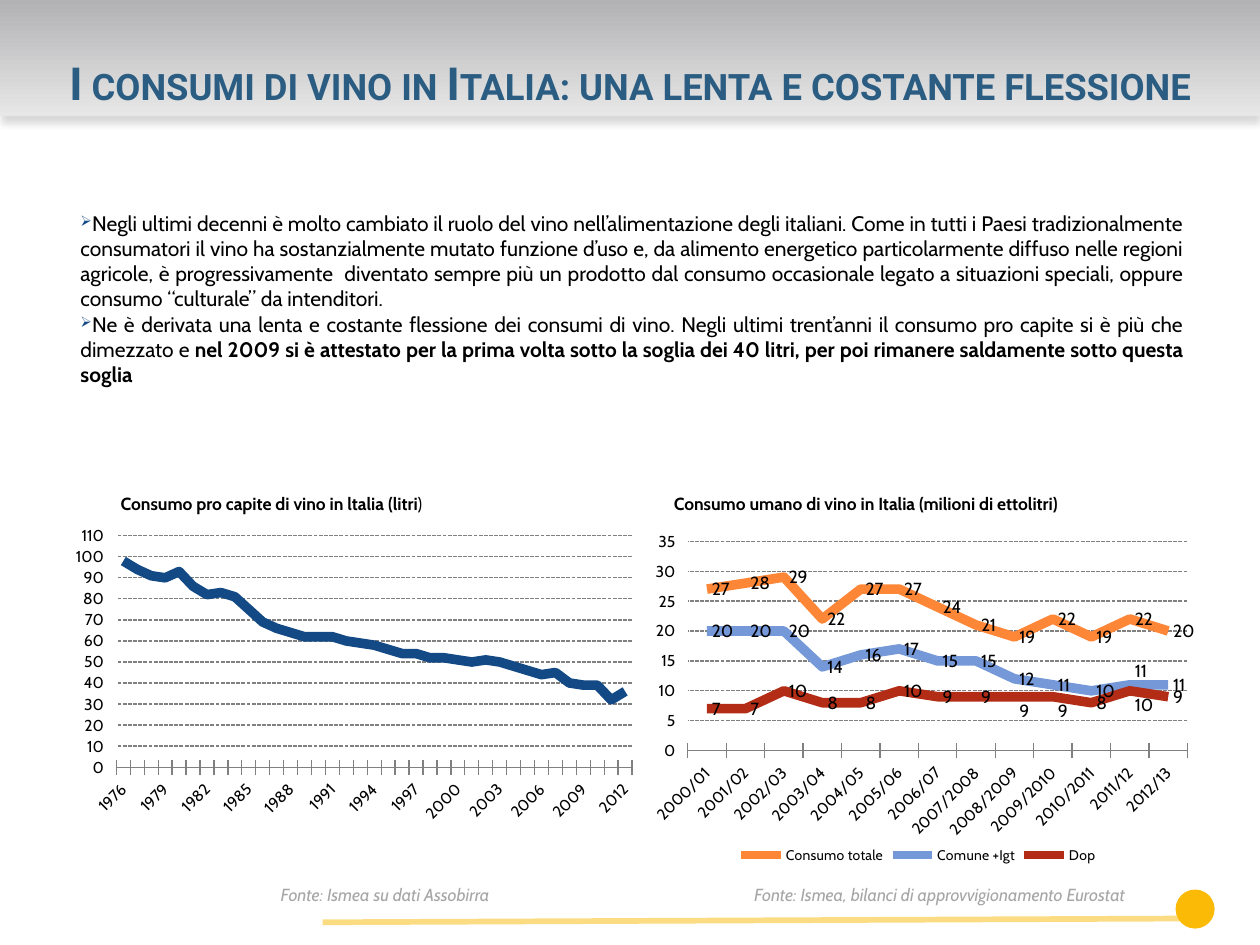
from dataclasses import dataclass

from lxml import etree
from pptx import Presentation
from pptx import oxml
from pptx.chart import data as chart_data
from pptx.dml import color as dml
from pptx.enum import chart as ce
from pptx.enum import dml as de
from pptx.enum import shapes, text
from pptx.oxml import ns
from pptx.util import Inches, Pt


@dataclass(frozen=True)
class Theme:
    title: str = "2B5C82"
    blue: str = "134985"
    gold: str = "FABA06"
    black: str = "000000"
    source: str = "A6A6A6"
    grid: str = "808080"
    shadow: str = "D9D9D9"
    band: tuple = ("B2B2B4", "E7E7E8")
    series: tuple = ("FE8637", "7598D9", "B32C16")
    heading_font: str = "Roboto"
    body_font: str = "Cabin"
    title_size: int = 26
    body_size: int = 12
    label_size: int = 10
    axis_size: int = 9
    legend_size: int = 8


THEME = Theme()
PER_CAPITA = [98, 94, 91, 90, 93, 86, 82, 83, 81, 75, 69, 66, 64, 62, 62, 62, 60, 59, 58,
              56, 54, 54, 52, 52, 51, 50, 51, 50, 48, 46, 44, 45, 40, 39, 39, 32, 36]
SEASONS = ["2000/01", "2001/02", "2002/03", "2003/04", "2004/05", "2005/06", "2006/07",
           "2007/2008", "2008/2009", "2009/2010", "2010/2011", "2011/12", "2012/13"]
CONSUMPTION = {
    "Consumo totale": [27, 28, 29, 22, 27, 27, 24, 21, 19, 22, 19, 22, 20],
    "Comune +Igt": [20, 20, 20, 14, 16, 17, 15, 15, 12, 11, 10, 11, 11],
    "Dop": [7, 7, 10, 8, 8, 10, 9, 9, 9, 9, 8, 10, 9],
}
LABEL_SHIFTS = {"Comune +Igt": {11: -0.04}, "Dop": {8: 0.04, 9: 0.04, 11: 0.04}}
PARAGRAPHS = [
    [("Negli ultimi decenni è molto cambiato il ruolo del vino nell’alimentazione degli italiani. "
      "Come in tutti i Paesi tradizionalmente consumatori il vino ha sostanzialmente mutato "
      "funzione d’uso e, da alimento energetico particolarmente diffuso nelle regioni agricole, "
      "è progressivamente  diventato sempre più un prodotto dal consumo occasionale legato a "
      "situazioni speciali, oppure consumo “culturale” da intenditori.", False)],
    [("Ne è derivata una lenta e costante flessione dei consumi di vino. Negli ultimi trent’anni "
      "il consumo pro capite si è più che dimezzato e ", False),
     ("nel 2009 si è attestato per la prima volta sotto la soglia dei 40 litri, per poi rimanere "
      "saldamente sotto questa soglia", True)],
]


def rgb(value):
    return dml.RGBColor.from_string(value)


def box(left, top, width, height):
    return Inches(left), Inches(top), Inches(width), Inches(height)


def style_font(font, size, color=THEME.black, name=THEME.body_font, bold=False, italic=False):
    font.size, font.name, font.bold, font.italic = Pt(size), name, bold, italic
    font.color.rgb = rgb(color)


def add_bullet(paragraph):
    properties = paragraph._p.get_or_add_pPr()
    properties.set("marL", "0")
    properties.set("indent", "0")
    for xml in (f'<a:buClr {ns.nsdecls("a")}><a:srgbClr val="{THEME.blue}"/></a:buClr>',
                f'<a:buSzPct {ns.nsdecls("a")} val="70000"/>',
                f'<a:buChar {ns.nsdecls("a")} char="➢"/>'):
        properties.append(oxml.parse_xml(xml))


def add_text(slide, place, paragraphs, size=THEME.label_size, color=THEME.black,
             align=text.PP_ALIGN.LEFT, italic=False, bullets=False):
    frame = slide.shapes.add_textbox(*box(*place)).text_frame
    frame.word_wrap = True
    for index, runs in enumerate(paragraphs):
        paragraph = frame.add_paragraph() if index else frame.paragraphs[0]
        paragraph.alignment = align
        if bullets:
            add_bullet(paragraph)
        for words, bold in runs:
            run = paragraph.add_run()
            run.text = words
            style_font(run.font, size, color, bold=bold, italic=italic)


def format_title(slide, words):
    title = slide.shapes.title
    title.left, title.top, title.width, title.height = box(0, 0, 10, 0.92)
    title.fill.gradient()
    title.fill.gradient_angle = 270
    for stop, value in zip(title.fill.gradient_stops, THEME.band):
        stop.color.rgb = rgb(value)
    title.shadow.inherit = False
    effects = title._element.spPr.find(ns.qn("a:effectLst"))
    effects.append(oxml.parse_xml(
        f'<a:outerShdw {ns.nsdecls("a")} blurRad="{Pt(4)}" dist="{Pt(4)}" dir="5400000">'
        f'<a:srgbClr val="{THEME.shadow}"/></a:outerShdw>'))
    frame = title.text_frame
    frame.vertical_anchor = text.MSO_ANCHOR.BOTTOM
    frame.text = words
    frame.paragraphs[0].alignment = text.PP_ALIGN.CENTER
    run = frame.paragraphs[0].runs[0]
    style_font(run.font, THEME.title_size, THEME.title, THEME.heading_font, bold=True)
    run._r.get_or_add_rPr().set("cap", "small")


def add_footer_mark(slide):
    line = slide.shapes.add_connector(shapes.MSO_CONNECTOR.STRAIGHT, Inches(2.56), Inches(7.32),
                                      Inches(9.41), Inches(7.29))
    line.line.width = Pt(3.25)
    line.line.color.rgb = rgb(THEME.gold)
    color = line._element.spPr.find(".//" + ns.qn("a:srgbClr"))
    etree.SubElement(color, ns.qn("a:alpha")).set("val", "49000")
    etree.SubElement(line._element.spPr, ns.qn("a:effectLst"))
    dot = slide.shapes.add_shape(shapes.MSO_SHAPE.OVAL, *box(9.33, 7.06, 0.31, 0.31))
    dot.shadow.inherit = False
    dot.fill.solid()
    dot.fill.fore_color.rgb = rgb(THEME.gold)
    dot.line.fill.background()


def manual_layout(**values):
    inner = "".join(f'<c:{tag} val="{value}"/>' for tag, value in values.items())
    return oxml.parse_xml(f'<c:layout {ns.nsdecls("c")}><c:manualLayout>{inner}'
                          '</c:manualLayout></c:layout>')


def format_axes(chart, maximum, step, label_skip):
    for axis in (chart.category_axis, chart.value_axis):
        style_font(axis.tick_labels.font, THEME.axis_size)
        axis.major_tick_mark = ce.XL_TICK_MARK.CROSS
        axis.format.line.color.rgb = rgb(THEME.grid)
    values = chart.value_axis
    values.minimum_scale, values.maximum_scale, values.major_unit = 0, maximum, step
    values.format.line.fill.background()
    values.major_gridlines.format.line.color.rgb = rgb(THEME.grid)
    values.major_gridlines.format.line.width = Pt(0.75)
    values.major_gridlines.format.line.dash_style = de.MSO_LINE.SQUARE_DOT
    categories = chart.category_axis._element
    text_body = categories.find(ns.qn("c:txPr"))
    text_body.find(ns.qn("a:bodyPr")).set("rot", "-2700000")
    before = categories.find(ns.qn("c:noMultiLvlLbl"))
    for tag, skip in (("tickLblSkip", label_skip), ("tickMarkSkip", 1)):
        before.addprevious(oxml.parse_xml(f'<c:{tag} {ns.nsdecls("c")} val="{skip}"/>'))


def add_labels(series, shifts):
    labels = series.data_labels
    labels.show_value = True
    labels.number_format, labels.number_format_is_linked = "0", False
    labels.position = ce.XL_LABEL_POSITION.RIGHT
    style_font(labels.font, THEME.label_size)
    for index, shift in shifts.items():
        label = series.points[index].data_label
        style_font(label.font, THEME.label_size)
        label.position = ce.XL_LABEL_POSITION.RIGHT
        label._dLbl.find(ns.qn("c:idx")).addnext(manual_layout(x=0, y=shift))


def add_line_chart(slide, place, categories, data, colors, plot, maximum, step,
                   label_skip=1, labels=False):
    source = chart_data.CategoryChartData(number_format="0")
    source.categories = categories
    for name, values in data.items():
        source.add_series(name, values)
    chart = slide.shapes.add_chart(ce.XL_CHART_TYPE.LINE, *box(*place), source).chart
    style_font(chart.font, THEME.label_size)
    chart.has_title = False
    chart.has_legend = labels
    chart.plots[0].vary_by_categories = False
    format_axes(chart, maximum, step, label_skip)
    area = chart._chartSpace.chart.plotArea
    for old in area.findall(ns.qn("c:layout")):
        area.remove(old)
    x, y, w, h = plot
    area.insert(0, manual_layout(layoutTarget="inner", xMode="edge", yMode="edge",
                                 x=x, y=y, w=w, h=h))
    for series, value in zip(chart.plots[0].series, colors):
        series.smooth = False
        series.marker.style = ce.XL_MARKER_STYLE.NONE
        series.format.line.width = Pt(5.5)
        series.format.line.color.rgb = rgb(value)
        if labels:
            add_labels(series, LABEL_SHIFTS.get(series.name, {}))
    if labels:
        chart.legend.position = ce.XL_LEGEND_POSITION.BOTTOM
        chart.legend.include_in_layout = False
        style_font(chart.legend.font, THEME.legend_size)


def main():
    presentation = Presentation()
    presentation.slide_width, presentation.slide_height = Inches(10), Inches(7.5)
    slide = presentation.slides.add_slide(presentation.slide_layouts[5])
    add_footer_mark(slide)
    format_title(slide, "I consumi di vino in Italia: una lenta e costante flessione")
    add_text(slide, (0.54, 1.62, 8.96, 1.42), PARAGRAPHS, size=THEME.body_size,
             align=text.PP_ALIGN.JUSTIFY, bullets=True)
    for place, runs in (
            ((0.86, 3.86, 4.45, 0.27),
             [("Consumo pro capite di vino in ltalia (litri", True), (")", False)]),
            ((5.25, 3.86, 4.45, 0.27),
             [("Consumo umano di vino in Italia (milioni di ettolitri)", True)])):
        add_text(slide, place, [runs])
    for place, words in (((1.4, 6.97, 3.31, 0.27), "Fonte: Ismea su dati Assobirra"),
                         ((5.23, 6.97, 4.45, 0.27),
                          "Fonte: Ismea, bilanci di approvvigionamento Eurostat")):
        add_text(slide, place, [[(words, False)]], color=THEME.source,
                 align=text.PP_ALIGN.CENTER, italic=True)
    add_line_chart(slide, (5.11, 4.13, 4.37, 2.77), SEASONS, CONSUMPTION, THEME.series,
                   (0.08, 0.06, 0.91, 0.6), 35, 5, labels=True)
    add_line_chart(slide, (0.51, 4.13, 4.6, 2.45), [str(year) for year in range(1976, 2013)],
                   {"Series 1": PER_CAPITA}, [THEME.blue], (0.09, 0.05, 0.89, 0.75), 110, 10,
                   label_skip=3)
    presentation.save("out.pptx")


if __name__ == "__main__":
    main()
